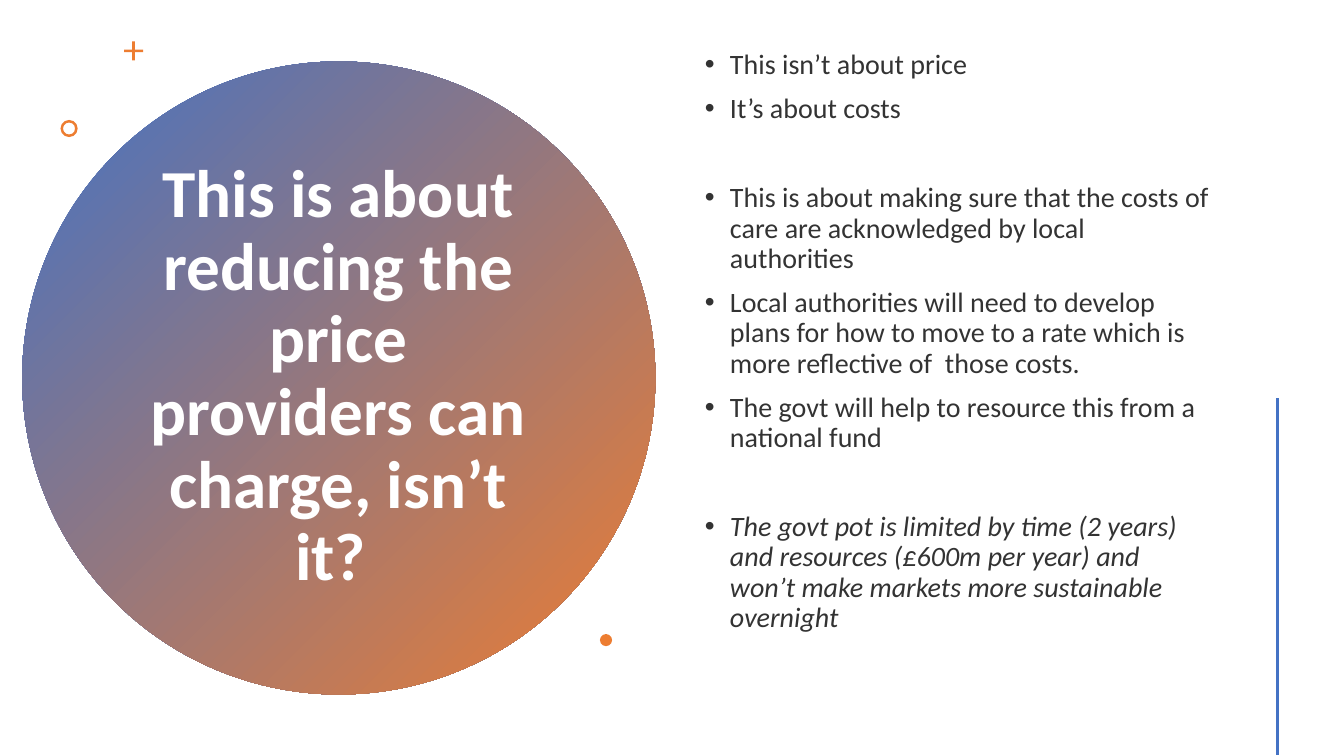
from lxml import etree
from pptx import Presentation, util as u
from pptx.dml.color import RGBColor
from pptx.enum import shapes, text
from pptx.oxml.ns import qn

BLUE, ORANGE, WHITE, INK = "4472C4", "ED7D31", "FFFFFF", "333333"
LINE_GAP, BLOCK_GAP = 10, 42


def rgb(value):
    return RGBColor.from_string(value)


class Deck:
    font = "Calibri"
    spacing = 0.9

    def __init__(self):
        self.prs = Presentation()
        self.prs.slide_width = u.Inches(13.33)
        self.prs.slide_height = u.Inches(7.5)
        self.slide = self.prs.slides.add_slide(self.prs.slide_layouts[1])

    def x(self, percent):
        return round(self.prs.slide_width * percent / 100)

    def y(self, percent):
        return round(self.prs.slide_height * percent / 100)

    def box(self, left, top, width, height):
        return self.x(left), self.y(top), self.x(width), self.y(height)

    def shape(self, kind, area, color, adjust=None):
        sp = self.slide.shapes.add_shape(kind, *self.box(*area))
        sp.shadow.inherit = False
        sp.fill.solid()
        sp.fill.fore_color.rgb = rgb(color)
        sp.line.fill.background()
        if adjust is not None:
            sp.adjustments[0] = adjust
        return sp

    def gradient_disc(self, area, colors):
        sp = self.shape(shapes.MSO_SHAPE.OVAL, area, colors[0])
        sp.fill.gradient()
        sp.fill.gradient_angle = 315
        for stop, position, color in zip(sp.fill.gradient_stops, (0, 1), colors):
            stop.position = position
            stop.color.rgb = rgb(color)
        self.slide.shapes._spTree.insert(2, sp._element)

    def line(self, start, end, color, width):
        cn = self.slide.shapes.add_connector(
            shapes.MSO_CONNECTOR.STRAIGHT,
            self.x(start[0]), self.y(start[1]), self.x(end[0]), self.y(end[1]))
        cn.line.color.rgb = rgb(color)
        cn.line.width = u.Pt(width)
        etree.SubElement(cn._element.spPr, qn("a:effectLst"))

    def frame(self, sp, area, anchor):
        sp.left, sp.top, sp.width, sp.height = self.box(*area)
        tf = sp.text_frame
        tf.word_wrap = True
        tf.auto_size = text.MSO_AUTO_SIZE.NONE
        tf.vertical_anchor = anchor
        return tf

    def run(self, p, words, size, color, bold=False, italic=False):
        p.line_spacing = self.spacing
        r = p.add_run()
        r.text = words
        r.font.name = self.font
        r.font.size = u.Pt(size)
        r.font.color.rgb = rgb(color)
        r.font.bold = bold
        r.font.italic = italic

    def title(self, area, words):
        tf = self.frame(self.slide.shapes.title, area, text.MSO_ANCHOR.MIDDLE)
        p = tf.paragraphs[0]
        p.alignment = text.PP_ALIGN.CENTER
        self.run(p, words, 48, WHITE, bold=True)

    def bullets(self, area, items):
        tf = self.frame(self.slide.placeholders[1], area, text.MSO_ANCHOR.TOP)
        for i, (gap, words, italic) in enumerate(items):
            p = tf.add_paragraph() if i else tf.paragraphs[0]
            p.space_before = u.Pt(gap)
            p.space_after = u.Pt(0)
            self.run(p, words, 20, INK, italic=italic)
            pPr = p._p.get_or_add_pPr()
            pPr.set("marL", str(u.Inches(0.25)))
            pPr.set("indent", str(-u.Inches(0.25)))
            etree.SubElement(pPr, qn("a:buFont")).set("typeface", "Arial")
            etree.SubElement(pPr, qn("a:buChar")).set("char", "•")


def main():
    deck = Deck()
    deck.gradient_disc((1.65, 8.13, 47.11, 83.73), (BLUE, ORANGE))
    deck.title((10.2, 18.8, 29.93, 62.27),
               "This is about reducing the price providers can charge, isn’t it? ")
    deck.shape(shapes.MSO_SHAPE.CROSS, (9.23, 5.47, 1.43, 2.53), ORANGE, 0.43)
    deck.shape(shapes.MSO_SHAPE.DONUT, (4.5, 15.87, 1.28, 2.27), ORANGE, 0.15)
    deck.bullets((51.69, 6, 39.16, 86.67), [
        (0, "This isn’t about price", False),
        (LINE_GAP, "It’s about costs", False),
        (BLOCK_GAP, "This is about making sure that the costs of care are "
                    "acknowledged by local authorities", False),
        (LINE_GAP, "Local authorities will need to develop plans for how to move "
                   "to a rate which is more reflective of  those costs.", False),
        (LINE_GAP, "The govt will help to resource this from a national fund", False),
        (BLOCK_GAP, "The govt pot is limited by time (2 years) and resources (£600m "
                    "per year) and won’t make markets more sustainable overnight", True),
    ])
    deck.shape(shapes.MSO_SHAPE.OVAL, (44.64, 83.87, 0.9, 1.6), ORANGE)
    deck.line((95.05, 52.67), (95.05, 99.87), BLUE, 2)
    deck.prs.save("out.pptx")


if __name__ == "__main__":
    main()
